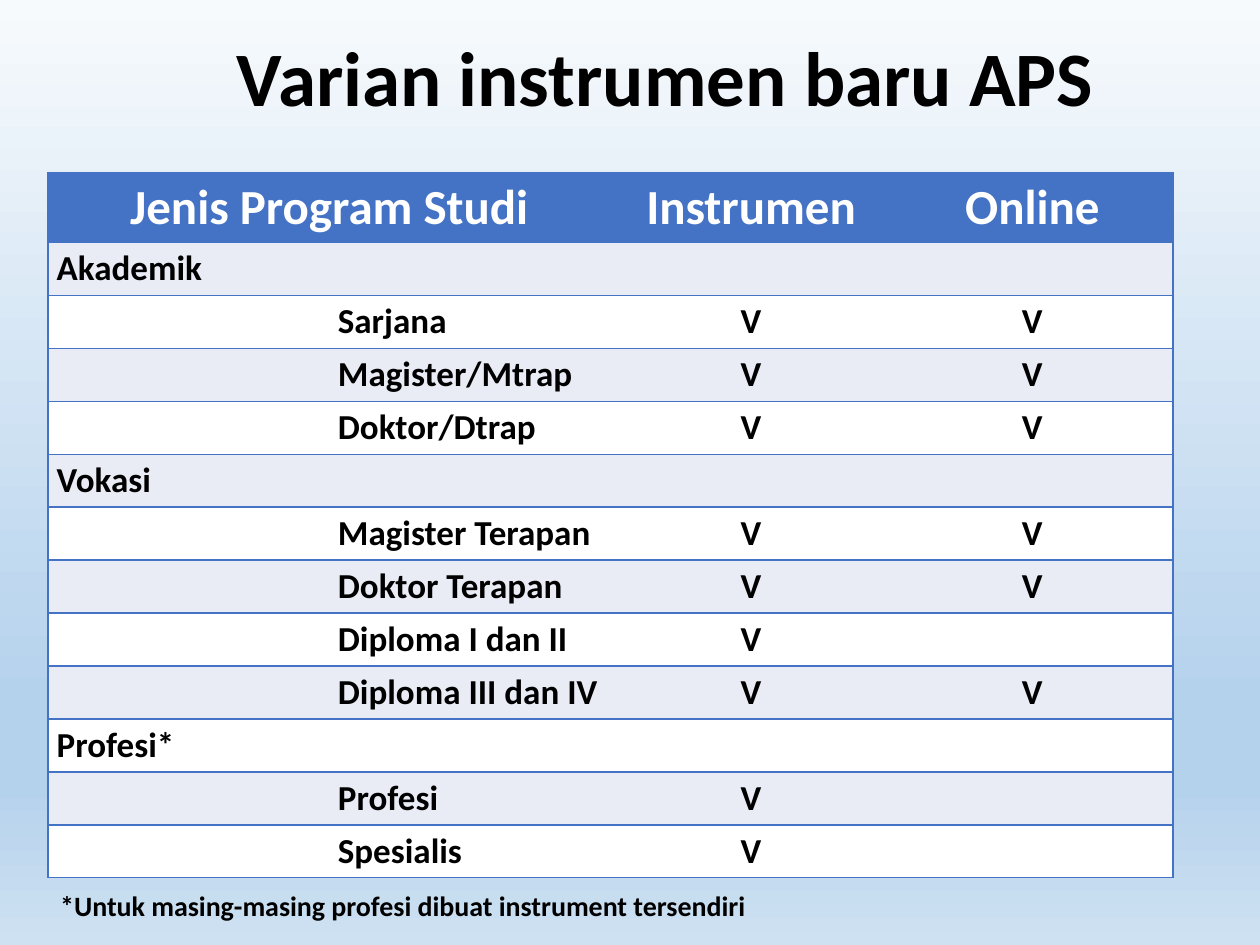
from lxml import etree
from pptx import Presentation
from pptx.dml.color import RGBColor
from pptx.enum.text import MSO_ANCHOR, MSO_AUTO_SIZE, PP_ALIGN
from pptx.oxml.ns import qn
from pptx.util import Inches, Pt

LEFT, CENTER, RIGHT = PP_ALIGN.LEFT, PP_ALIGN.CENTER, PP_ALIGN.RIGHT
TOP, MIDDLE = MSO_ANCHOR.TOP, MSO_ANCHOR.MIDDLE
NO_FIT, GROW = MSO_AUTO_SIZE.NONE, MSO_AUTO_SIZE.SHAPE_TO_FIT_TEXT

BLACK = RGBColor(0x00, 0x00, 0x00)
WHITE = RGBColor(0xFF, 0xFF, 0xFF)
BLUE = RGBColor(0x44, 0x72, 0xC4)
BAND = RGBColor(0xE9, 0xEB, 0xF5)
SKY = [
    (0, RGBColor(0xF7, 0xFA, 0xFD)),
    (74, RGBColor(0xB5, 0xD2, 0xEC)),
    (83, RGBColor(0xB5, 0xD2, 0xEC)),
    (100, RGBColor(0xCE, 0xE1, 0xF2)),
]
PLAIN_STYLE = "{2D5ABB26-0587-4C30-8999-92F81FD0307C}"
HEADER_H = 0.55

HEADER = ["Jenis Program Studi", "", "Instrumen", "Online"]
GROUPS = {
    "Akademik": [("Sarjana", "V", "V"), ("Magister/Mtrap", "V", "V"),
                 ("Doktor/Dtrap", "V", "V")],
    "Vokasi": [("Magister Terapan", "V", "V"), ("Doktor Terapan", "V", "V"),
               ("Diploma I dan II", "V", ""), ("Diploma III dan IV", "V", "V")],
    "Profesi*": [("Profesi", "V", ""), ("Spesialis", "V", "")],
}


def write(tf, text, size, color=BLACK, align=LEFT):
    """Put one bold line of text into a text frame."""
    p = tf.paragraphs[0]
    p.alignment = align
    r = p.add_run()
    r.text = text
    font = {"name": "Calibri", "size": Pt(size), "bold": True}
    for name, value in font.items():
        setattr(r.font, name, value)
    r.font.color.rgb = color
    return p


def paint_background(s):
    """Fill the slide with the vertical sky gradient."""
    fill = s.background.fill
    fill.gradient()
    fill.gradient_angle = 270
    stops = s.element.find(".//" + qn("a:gsLst"))
    for stop in list(stops):
        stops.remove(stop)
    for pos, color in SKY:
        stop = etree.SubElement(stops, qn("a:gs"), pos=str(pos * 1000))
        etree.SubElement(stop, qn("a:srgbClr"), val=str(color))


def add_title(s, box):
    """Place the slide title in its box."""
    sp = s.shapes.title
    sp.left, sp.top, sp.width, sp.height = map(Inches, box)
    tf = sp.text_frame
    tf.vertical_anchor = MIDDLE
    tf.auto_size = NO_FIT
    p = write(tf, "Varian instrumen baru APS", 44, align=RIGHT)
    p.line_spacing = 0.9


def set_borders(cell, sides):
    """Draw blue lines on the named sides and none on the others."""
    tc_pr = cell._tc.get_or_add_tcPr()
    for i, side in enumerate("LRTB"):
        ln = etree.Element(qn("a:ln" + side), w=str(Pt(1)))
        if side in sides:
            fill = etree.SubElement(ln, qn("a:solidFill"))
            etree.SubElement(fill, qn("a:srgbClr"), val=str(BLUE))
        else:
            etree.SubElement(ln, qn("a:noFill"))
        tc_pr.insert(i, ln)


def format_cell(cell, text, i, j, last):
    """Fill, border and label the cell at row i and column j."""
    marks = {"margin_left": Inches(0.07), "margin_right": Inches(0.07),
             "margin_top": Inches(0.04), "margin_bottom": Inches(0.04),
             "vertical_anchor": MIDDLE if j > 1 else TOP}
    for name, value in marks.items():
        setattr(cell, name, value)
    cell.fill.solid()
    cell.fill.fore_color.rgb = BLUE if i == 0 else BAND if i % 2 else WHITE
    set_borders(cell, "TB" + ("L" if j == 0 else "R" if j == last else ""))
    if text:
        size, color = (28, WHITE) if i == 0 else (20, BLACK)
        align = CENTER if i == 0 or j > 1 else LEFT
        write(cell.text_frame, text, size, color, align)


def add_programs(s, box):
    """Place the table of study programs in its box."""
    rows = [HEADER]
    for group, programs in GROUPS.items():
        rows.append([group, "", "", ""])
        rows.extend(["", *program] for program in programs)
    cols = len(HEADER)
    frame = s.shapes.add_table(len(rows), cols, *map(Inches, box))
    table = frame.table
    table.horz_banding = False
    frame.element.find(".//" + qn("a:tableStyleId")).text = PLAIN_STYLE
    for col in table.columns:
        col.width = Inches(box[2] / cols)
    row_h = (box[3] - HEADER_H) / (len(rows) - 1)
    for i, texts in enumerate(rows):
        table.rows[i].height = Inches(row_h if i else HEADER_H)
        for j, text in enumerate(texts):
            format_cell(table.cell(i, j), text, i, j, cols - 1)
    table.cell(0, 0).merge(table.cell(0, 1))


def add_footnote(s, box):
    """Place the footnote below the table."""
    tf = s.shapes.add_textbox(*map(Inches, box)).text_frame
    tf.word_wrap = True
    tf.auto_size = GROW
    write(tf, "*Untuk masing-masing profesi dibuat instrument tersendiri", 16)


def main():
    """Build and save the slide."""
    prs = Presentation()
    prs.slide_width, prs.slide_height = Inches(10), Inches(7.5)
    s = prs.slides.add_slide(prs.slide_layouts[5])
    paint_background(s)
    add_title(s, (0.17, 0.23, 8.62, 0.83))
    add_programs(s, (0.38, 1.37, 8.93, 5.53))
    add_footnote(s, (0.38, 7, 6.63, 0.37))
    prs.save("out.pptx")


if __name__ == "__main__":
    main()
